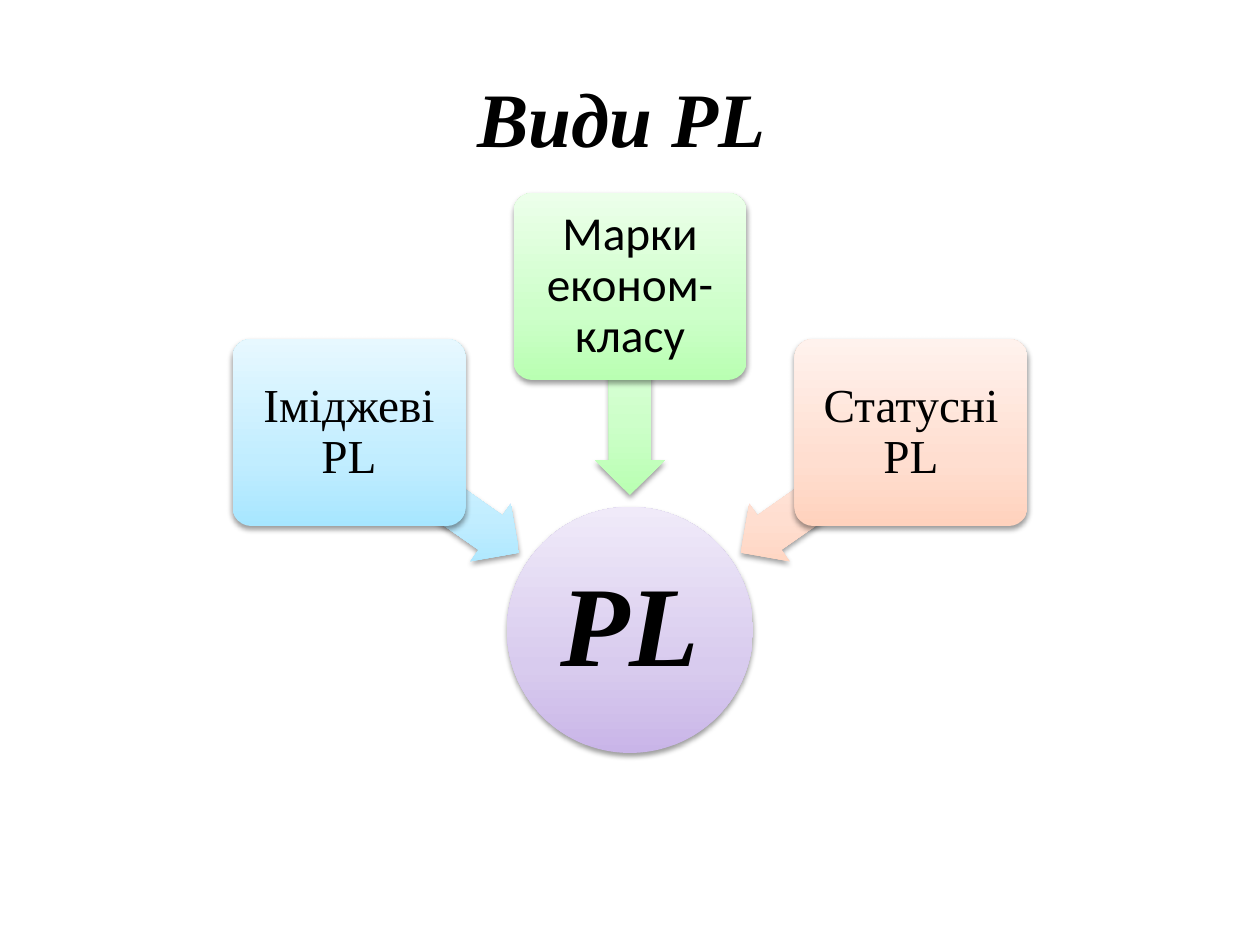
"""Build a slide showing three kinds of PL pointing to a central circle."""
from copy import deepcopy
from dataclasses import dataclass

from lxml.etree import SubElement
from pptx import Presentation
from pptx.dml.color import RGBColor
from pptx.enum.shapes import MSO_SHAPE
from pptx.enum.text import MSO_ANCHOR, PP_ALIGN
from pptx.oxml.ns import qn
from pptx.util import Emu, Pt

SCALE = 914400 / 126
BLACK = RGBColor(0x00, 0x00, 0x00)
PURPLE = (RGBColor(0xC9, 0xB5, 0xE8), RGBColor(0xD8, 0xCB, 0xEE), RGBColor(0xF0, 0xEA, 0xF9))
BLUE = (RGBColor(0xA7, 0xE6, 0xFF), RGBColor(0xC1, 0xED, 0xFF), RGBColor(0xE7, 0xF8, 0xFF))
GREEN = (RGBColor(0xB9, 0xFF, 0xB2), RGBColor(0xCD, 0xFF, 0xC9), RGBColor(0xEC, 0xFF, 0xEA))
PEACH = (RGBColor(0xFF, 0xD2, 0xBD), RGBColor(0xFF, 0xDE, 0xD0), RGBColor(0xFF, 0xF2, 0xED))
STOPS = (0, 0.35, 1)
SERIF = "Times New Roman"
CENTER_X = 630
COLUMN_STEP = 281
BOX_WIDTH, BOX_HEIGHT = 233, 187
ARROW_WIDTH, ARROW_HEIGHT = 208, 70
CIRCLE_TOP, CIRCLE_SIZE = 507, 246


@dataclass(frozen=True)
class Kind:
    """A kind of PL with its box and arrow."""
    label: str
    font: str
    colors: tuple
    column: int
    top: int
    arrow_x: int
    arrow_y: int
    rotation: int


KINDS = (
    Kind("Іміджеві PL", SERIF, BLUE, -1, 339, 434, 493, 215),
    Kind("Марки економ-класу", "Calibri", GREEN, 0, 193, 630, 391, 270),
    Kind("Статусні PL", SERIF, PEACH, 1, 339, 826, 493, 325),
)


def px(value: float) -> Emu:
    """Turn pixels into EMU."""
    return Emu(round(value * SCALE))


def paint(shape, colors: tuple) -> None:
    """Give a shape a three-stop gradient, no outline and a soft shadow."""
    shape.line.fill.background()
    shape.fill.gradient()
    shape.fill.gradient_angle = 90
    gradient = shape._element.spPr.find(qn("a:gradFill"))
    gradient.set("rotWithShape", "0")
    stop_list = gradient.find(qn("a:gsLst"))
    stop_list.append(deepcopy(stop_list[-1]))
    for stop, position, color in zip(shape.fill.gradient_stops, STOPS, colors):
        stop.position = position
        stop.color.rgb = color
    shape.shadow.inherit = False
    effects = shape._element.spPr.find(qn("a:effectLst"))
    shadow = SubElement(effects, qn("a:outerShdw"), blurRad="40000", dist="20000",
                        dir="5400000", rotWithShape="0")
    shade = SubElement(shadow, qn("a:srgbClr"), val=str(BLACK))
    SubElement(shade, qn("a:alpha"), val="38000")


def add_shape(page, preset, center_x: int, center_y: float, width: int, height: int,
              colors: tuple):
    """Add a painted shape around a centre point."""
    shape = page.shapes.add_shape(preset, px(center_x - width / 2), px(center_y - height / 2),
                                  px(width), px(height))
    paint(shape, colors)
    return shape


def write(shape, text: str, font: str, size: int, strong: bool = False) -> None:
    """Write one centred black paragraph into a shape."""
    frame = shape.text_frame
    frame.text = text
    frame.word_wrap = True
    frame.vertical_anchor = MSO_ANCHOR.MIDDLE
    paragraph = frame.paragraphs[0]
    paragraph.alignment = PP_ALIGN.CENTER
    span = paragraph.runs[0].font
    span.name = font
    span.size = Pt(size)
    span.bold = span.italic = strong
    span.color.rgb = BLACK


def fit_label(shape, inset: int) -> None:
    """Set equal insets and tight lines for a label."""
    frame = shape.text_frame
    frame.margin_left = frame.margin_right = px(inset)
    frame.margin_top = frame.margin_bottom = px(inset)
    frame.paragraphs[0].line_spacing = 0.9


def add_kind(page, kind: Kind) -> None:
    """Add an arrow and the labelled box that covers its tail."""
    arrow = add_shape(page, MSO_SHAPE.LEFT_ARROW, kind.arrow_x, kind.arrow_y,
                      ARROW_WIDTH, ARROW_HEIGHT, kind.colors)
    arrow.adjustments[0] = 0.6
    arrow.adjustments[1] = 0.5
    arrow.rotation = kind.rotation
    box = add_shape(page, MSO_SHAPE.ROUNDED_RECTANGLE, CENTER_X + kind.column * COLUMN_STEP,
                    kind.top + BOX_HEIGHT / 2, BOX_WIDTH, BOX_HEIGHT, kind.colors)
    box.adjustments[0] = 0.1
    write(box, kind.label, kind.font, 27)
    fit_label(box, 7)


def main() -> None:
    """Build and save the deck."""
    deck = Presentation()
    deck.slide_width, deck.slide_height = px(1260), px(945)
    page = deck.slides.add_slide(deck.slide_layouts[6])
    title = page.shapes.add_textbox(px(63), px(38), px(1134), px(158))
    write(title, "Види PL ", SERIF, 44, strong=True)
    circle = add_shape(page, MSO_SHAPE.OVAL, CENTER_X, CIRCLE_TOP + CIRCLE_SIZE / 2,
                       CIRCLE_SIZE, CIRCLE_SIZE, PURPLE)
    write(circle, "PL", SERIF, 65, strong=True)
    fit_label(circle, 6)
    for kind in KINDS:
        add_kind(page, kind)
    deck.save("out.pptx")


if __name__ == "__main__":
    main()
